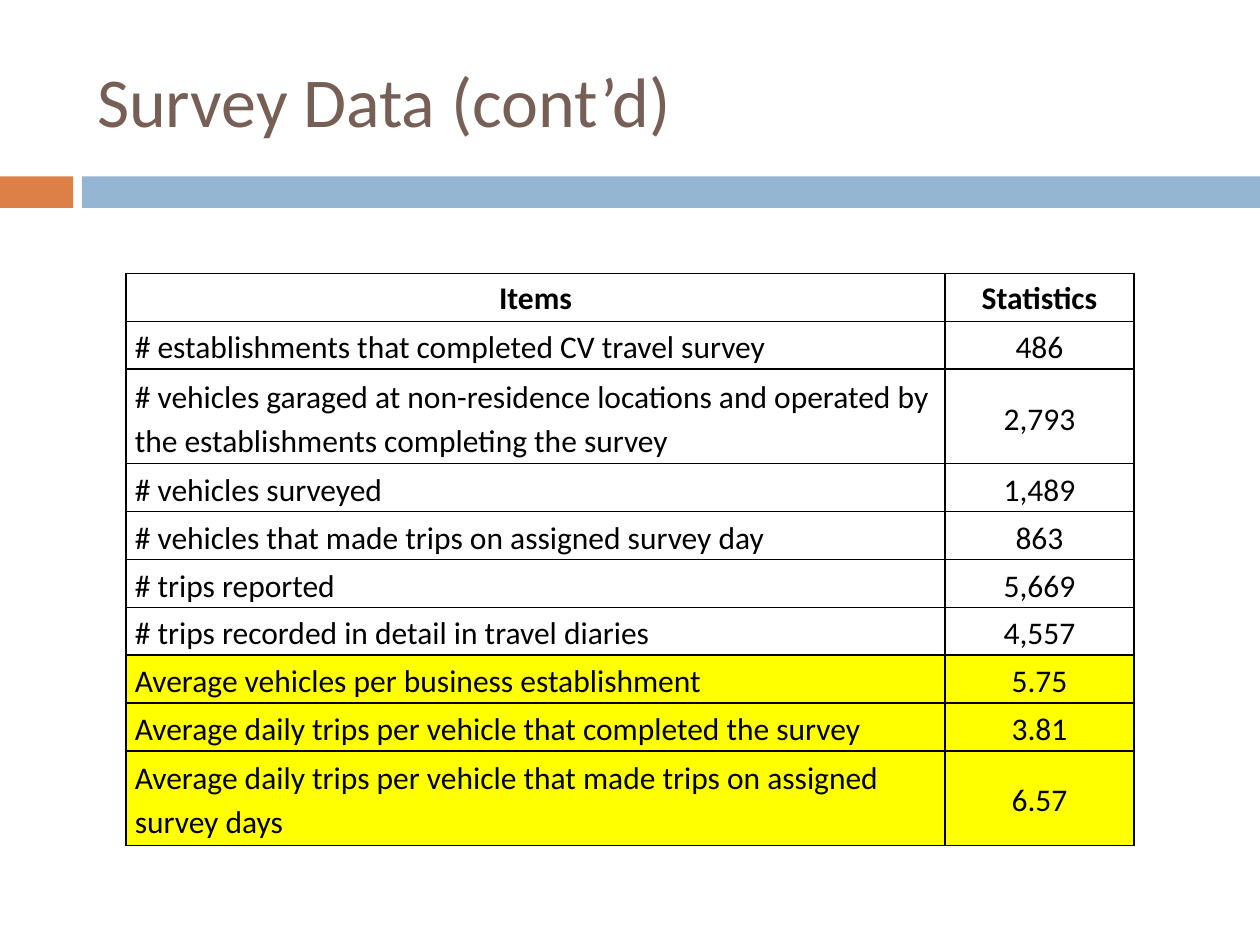
from lxml import etree
from pptx import Presentation
from pptx.dml.color import RGBColor
from pptx.enum.shapes import MSO_SHAPE
from pptx.enum.text import MSO_ANCHOR, MSO_AUTO_SIZE, PP_ALIGN
from pptx.oxml.ns import qn
from pptx.util import Inches, Pt

RECTANGLE = MSO_SHAPE.RECTANGLE
TOP, MIDDLE = MSO_ANCHOR.TOP, MSO_ANCHOR.MIDDLE
LEFT, CENTER = PP_ALIGN.LEFT, PP_ALIGN.CENTER
NO_AUTOFIT = MSO_AUTO_SIZE.NONE

ORANGE = RGBColor(0xDD, 0x80, 0x47)
BLUE = RGBColor(0x94, 0xB6, 0xD2)
BROWN = RGBColor(0x77, 0x5F, 0x55)
BLACK = RGBColor(0x00, 0x00, 0x00)
YELLOW = RGBColor(0xFF, 0xFF, 0x00)

COLUMN_WIDTHS = [6.5, 1.5]
SINGLE_HEIGHT, DOUBLE_HEIGHT = 0.38, 0.75
TWO_LINE_ROWS = {2, 9}
FIRST_AVERAGE_ROW = 7
ROWS = [
    ("Items", "Statistics"),
    ("# establishments that completed CV travel survey", "486"),
    ("# vehicles garaged at non-residence locations and operated by "
     "the establishments completing the survey", "2,793"),
    ("# vehicles surveyed", "1,489"),
    ("# vehicles that made trips on assigned survey day", "863"),
    ("# trips reported", "5,669"),
    ("# trips recorded in detail in travel diaries", "4,557"),
    ("Average vehicles per business establishment", "5.75"),
    ("Average daily trips per vehicle that completed the survey", "3.81"),
    ("Average daily trips per vehicle that made trips on assigned "
     "survey days", "6.57"),
]


def write(para, text, color, **font_format):
    span = para.add_run()
    span.text = text
    span.font.color.rgb = color
    for name, value in {"name": "Calibri", **font_format}.items():
        setattr(span.font, name, value)


def add_borders(cell):
    properties = cell._tc.get_or_add_tcPr()
    for side in ("lnL", "lnR", "lnT", "lnB"):
        line = etree.SubElement(properties, qn(f"a:{side}"), w=str(Pt(1)))
        fill = etree.SubElement(line, qn("a:solidFill"))
        etree.SubElement(fill, qn("a:srgbClr"), val=str(BLACK))


deck = Presentation()
deck.slide_width, deck.slide_height = Inches(10), Inches(7.5)
page = deck.slides.add_slide(deck.slide_layouts[5])

for left, width, color in [(0, 0.58, ORANGE), (0.65, 9.35, BLUE)]:
    band = page.shapes.add_shape(
        RECTANGLE, Inches(left), Inches(1.4), Inches(width), Inches(0.25))
    band.shadow.inherit = False
    band.fill.solid()
    band.fill.fore_color.rgb = color
    band.line.fill.background()

title = page.shapes.title
title.left, title.top = Inches(0.67), Inches(0.25)
title.width, title.height = Inches(8.92), Inches(1.08)
title.text_frame.vertical_anchor = MIDDLE
title.text_frame.auto_size = NO_AUTOFIT
heading = title.text_frame.paragraphs[0]
heading.alignment = LEFT
write(heading, "Survey Data (cont’d)", BROWN, size=Pt(40))

heights = [DOUBLE_HEIGHT if index in TWO_LINE_ROWS else SINGLE_HEIGHT
           for index in range(len(ROWS))]
table = page.shapes.add_table(
    len(ROWS), len(COLUMN_WIDTHS), Inches(1), Inches(2.17),
    Inches(sum(COLUMN_WIDTHS)), Inches(sum(heights))).table
table.first_row = table.horz_banding = False
for column, width in zip(table.columns, COLUMN_WIDTHS):
    column.width = Inches(width)

for row_index, texts in enumerate(ROWS):
    table.rows[row_index].height = Inches(heights[row_index])
    is_header = row_index == 0
    for column_index, text in enumerate(texts):
        cell = table.cell(row_index, column_index)
        cell_format = {
            "margin_left": Inches(0.07), "margin_right": Inches(0.07),
            "margin_top": 0, "margin_bottom": 0,
            "vertical_anchor": TOP if is_header else MIDDLE,
        }
        for name, value in cell_format.items():
            setattr(cell, name, value)
        add_borders(cell)
        if row_index >= FIRST_AVERAGE_ROW:
            cell.fill.solid()
            cell.fill.fore_color.rgb = YELLOW
        else:
            cell.fill.background()
        para = cell.text_frame.paragraphs[0]
        para.alignment = CENTER if is_header or column_index == 1 else LEFT
        para.line_spacing = 1.15
        write(para, text, BLACK, size=Pt(18), bold=is_header)

deck.save("out.pptx")
